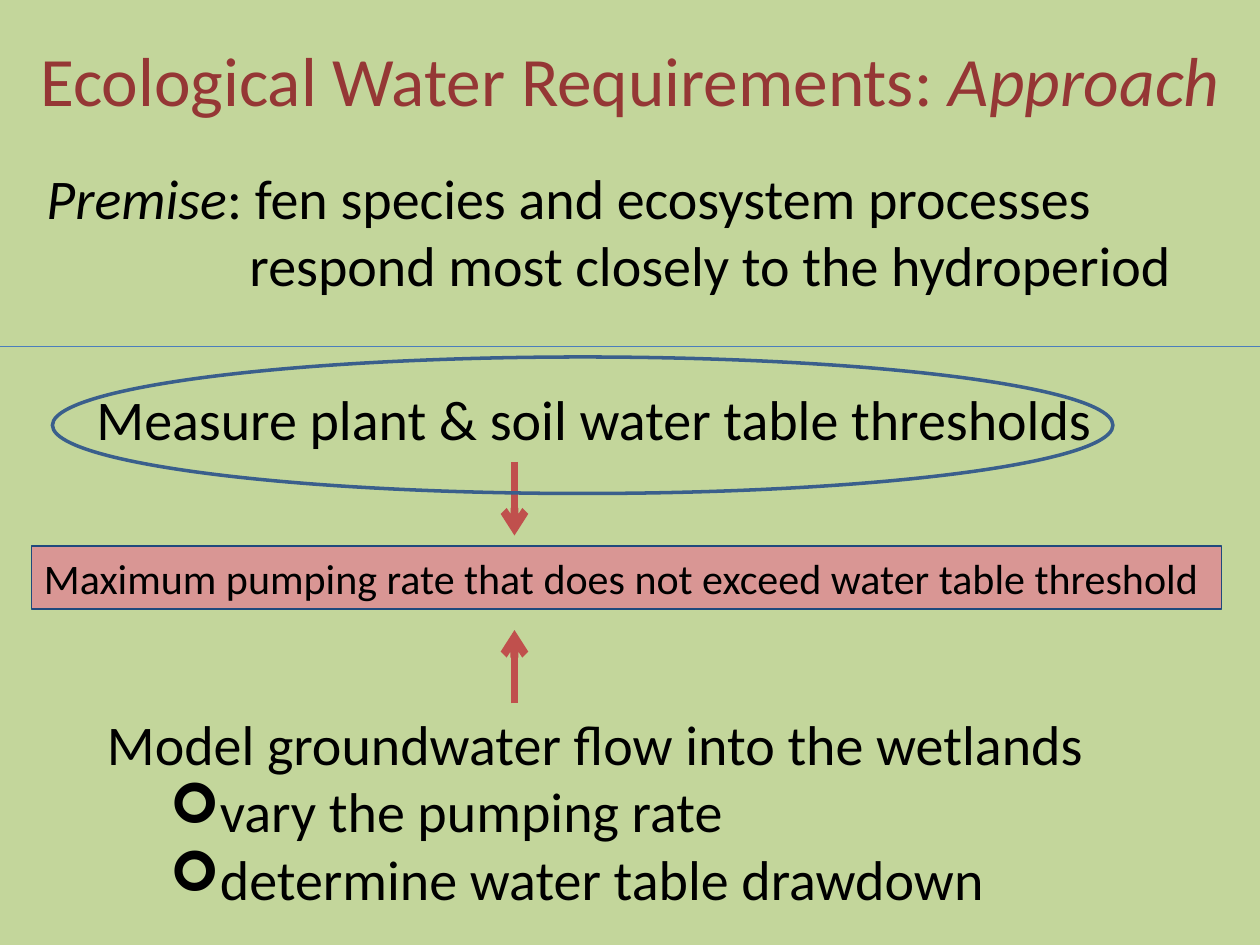
from lxml.etree import SubElement
from pptx import Presentation
from pptx.dml.color import RGBColor
from pptx.enum.shapes import MSO_CONNECTOR as Link, MSO_SHAPE as Preset
from pptx.enum.text import MSO_ANCHOR as Anchor, MSO_AUTO_SIZE as Fit, PP_ALIGN as Align
from pptx.oxml.ns import qn
from pptx.util import Pt


def color(hex_string):
    return RGBColor.from_string(hex_string)


class FenSlide:
    font, ink = "Calibri", "000000"
    background, heading = "C3D69B", "953735"
    arrow_red, oval_blue = "C0504D", "3A5F8C"

    def __init__(self, deck):
        self.slide = deck.slides.add_slide(deck.slide_layouts[5])
        fill = self.slide.background.fill
        fill.solid()
        fill.fore_color.rgb = color(self.background)

    def add_runs(self, paragraph, runs, size=32, ink=None, align=Align.LEFT):
        """Add (text, italic) runs to a paragraph."""
        paragraph.alignment = align
        for text, italic in runs:
            run = paragraph.add_run()
            run.text = text
            look = {"name": self.font, "size": Pt(size), "italic": italic}
            for key, value in look.items():
                setattr(run.font, key, value)
            run.font.color.rgb = color(ink or self.ink)

    def indent(self, paragraph, left, bullet=None):
        props = paragraph._p.get_or_add_pPr()
        props.set("marL", str(Pt(left)))
        props.set("indent", "0")
        if bullet:
            SubElement(props, qn("a:buFont")).set("typeface", "Wingdings")
            SubElement(props, qn("a:buChar")).set("char", bullet)

    def title(self, box, runs):
        title = self.slide.shapes.title
        for side, value in zip(("left", "top", "width", "height"), box):
            setattr(title, side, Pt(value))
        title.text_frame.vertical_anchor = Anchor.MIDDLE
        self.add_runs(title.text_frame.paragraphs[0], runs, 39.6, self.heading, Align.CENTER)

    def text(self, box, lines, wrap=False):
        """Add a text box; each line is (runs, left indent, bullet)."""
        frame = self.slide.shapes.add_textbox(*map(Pt, box)).text_frame
        frame.word_wrap = wrap
        frame.auto_size = Fit.SHAPE_TO_FIT_TEXT
        for number, (runs, left, bullet) in enumerate(lines):
            paragraph = frame.add_paragraph() if number else frame.paragraphs[0]
            if bullet:
                paragraph.level = 1
            self.add_runs(paragraph, runs)
            if left:
                self.indent(paragraph, left, bullet)

    def shape(self, preset, box, line, weight, fill=None):
        shape = self.slide.shapes.add_shape(preset, *map(Pt, box))
        shape.shadow.inherit = False
        shape.line.color.rgb = color(line)
        shape.line.width = Pt(weight)
        if fill:
            shape.fill.solid()
            shape.fill.fore_color.rgb = color(fill)
        else:
            shape.fill.background()
        return shape

    def banner(self, box, text, line, fill):
        frame = self.shape(Preset.RECTANGLE, box, line, 0.75, fill).text_frame
        frame.word_wrap = False
        frame.auto_size = Fit.SHAPE_TO_FIT_TEXT
        self.add_runs(frame.paragraphs[0], [(text, False)], 24)

    def line(self, start, end, hex_string, weight, arrow=False):
        link = self.slide.shapes.add_connector(Link.STRAIGHT, *map(Pt, start + end))
        link.line.color.rgb = color(hex_string)
        link.line.width = Pt(weight)
        props = link._element.spPr
        if arrow:
            SubElement(props.find(qn("a:ln")), qn("a:tailEnd")).set("type", "arrow")
        SubElement(props, qn("a:effectLst"))


def main():
    deck = Presentation()
    deck.slide_width, deck.slide_height = Pt(720), Pt(540)
    fen = FenSlide(deck)

    steps = [([("Model groundwater flow into the wetlands", False)], 0, None)]
    for step in ("vary the pumping rate", "determine water table drawdown"):
        steps.append(([(step, False)], 36, "➢"))
    fen.text((54, 402, 578, 124), steps)

    measure = [("Measure plant & soil water table thresholds", False)]
    fen.text((48, 216, 589, 46), [(measure, 0, None)])

    fen.title((0, 0, 720, 90),
              [("Ecological Water Requirements: ", False), ("Approach", True)])

    premise = [("Premise", True), (": fen species and ecosystem processes", False)]
    response = [("respond most closely to the hydroperiod", False)]
    fen.text((19.5, 90, 700.5, 85), [(premise, 0, None), (response, 116, None)], wrap=True)

    fen.line((0, 198), (720, 198), "4B7EBC", 0.75)
    fen.banner((18, 312, 680, 36),
               "Maximum pumping rate that does not exceed water table threshold",
               "1F497D", "D99694")
    for start, end in ((264, 306), (402, 360)):
        fen.line((294, start), (294, end), fen.arrow_red, 4.5, arrow=True)
    fen.shape(Preset.OVAL, (30, 204, 606, 78), fen.oval_blue, 2)

    deck.save("out.pptx")


if __name__ == "__main__":
    main()
